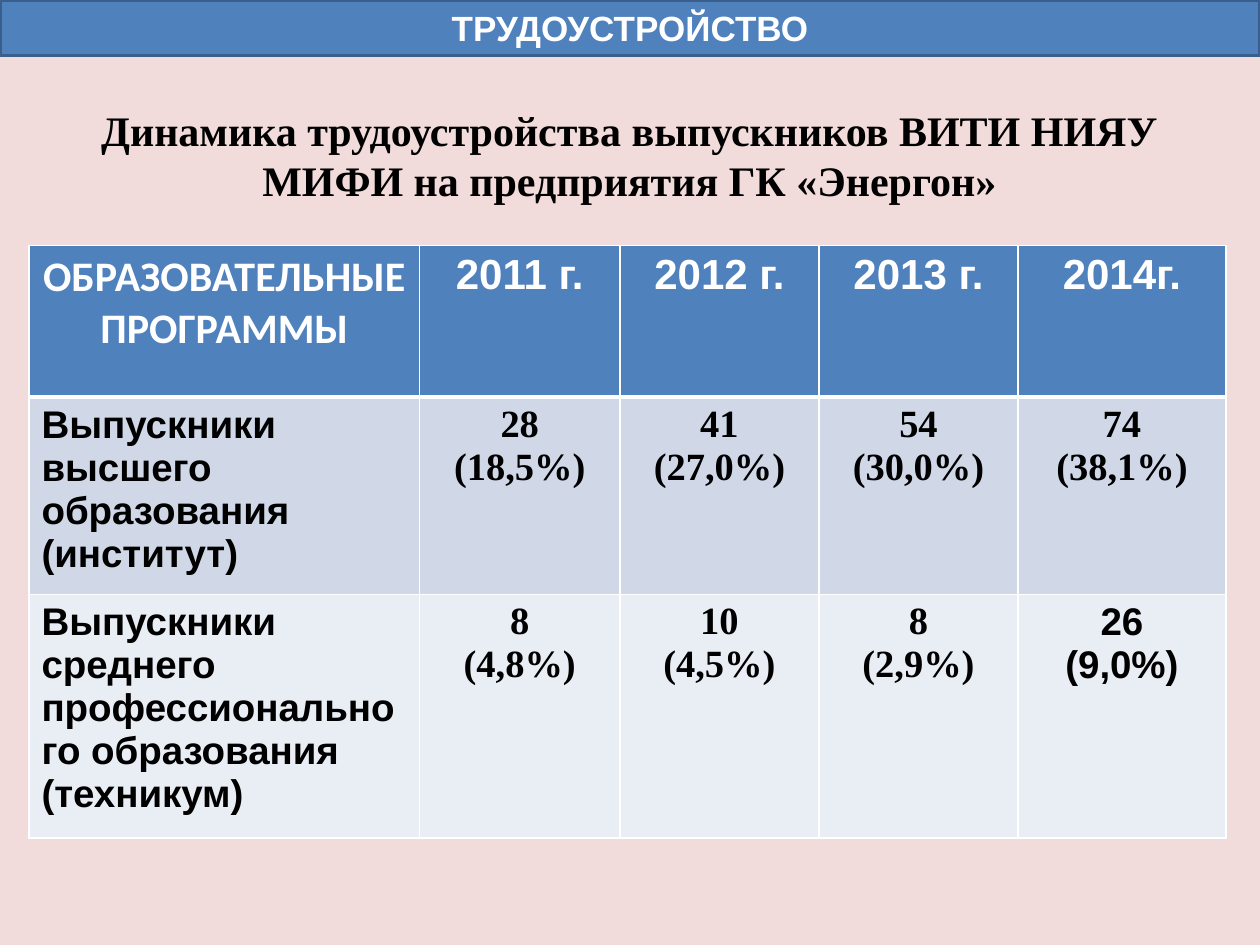
import pptx
import pptx.util
import pptx.dml.color
import pptx.enum.shapes
import pptx.enum.text
import pptx.oxml
import pptx.oxml.ns

Inches, Pt = pptx.util.Inches, pptx.util.Pt
ALIGN = pptx.enum.text.PP_ALIGN
MID = pptx.enum.text.MSO_ANCHOR.MIDDLE

# Content
BANNER = "ТРУДОУСТРОЙСТВО"
TITLE = "Динамика трудоустройства выпускников ВИТИ НИЯУ МИФИ на предприятия ГК «Энергон»"
HEADS = ["ОБРАЗОВАТЕЛЬНЫЕ ПРОГРАММЫ", "2011 г.", "2012 г.", "2013 г.", "2014г."]
ROWS = [
    ["Выпускники высшего образования (институт)",
     "28\n(18,5%)", "41\n(27,0%)", "54\n(30,0%)", "74\n(38,1%)"],
    ["Выпускники среднего профессионального образования (техникум)",
     "8\n(4,8%)", "10\n(4,5%)", "8\n(2,9%)", "26\n(9,0%)"],
]
WIDTHS = [3.1, 1.59, 1.58, 1.58, 1.65]
HEIGHTS = [1.2, 1.56, 1.93]
FILLS = ["4F81BD", "D0D8E8", "E9EDF4"]
SERIF = "Times New Roman"


def color(code):
    return pptx.dml.color.RGBColor.from_string(code)


def paint(fill, code):
    fill.solid()
    fill.fore_color.rgb = color(code)


def write(frame, text, size=24, font="Arial", ink="000000", align=ALIGN.CENTER):
    frame.word_wrap = True
    for i, line in enumerate(text.split("\n")):
        para = frame.add_paragraph() if i else frame.paragraphs[0]
        para.alignment = align
        run = para.add_run()
        run.text = line
        run.font.size, run.font.name, run.font.bold = Pt(size), font, True
        run.font.color.rgb = color(ink)


def border(cell, base):
    """White cell edges; base is the width of the bottom one in points."""
    props = cell._tc.get_or_add_tcPr()
    for i, (side, width) in enumerate([("L", 1), ("R", 1), ("T", 1), ("B", base)]):
        props.insert(i, pptx.oxml.parse_xml(
            f'<a:ln{side} {pptx.oxml.ns.nsdecls("a")} w="{Pt(width)}"><a:solidFill>'
            f'<a:srgbClr val="FFFFFF"/></a:solidFill></a:ln{side}>'))


def style(row, col):
    """Text format of a table cell."""
    if row == 0:
        return dict(font="Arial" if col else "Calibri", ink="FFFFFF")
    if col == 0:
        return dict(size=22, align=ALIGN.LEFT)
    last = (row, col) == (len(ROWS), len(HEADS) - 1)
    return dict(size=22, font="Arial" if last else SERIF)


deck = pptx.Presentation()
deck.slide_width, deck.slide_height = Inches(10), Inches(7.5)
slide = deck.slides.add_slide(deck.slide_layouts[6])
paint(slide.background.fill, "F2DCDB")

# Title
box = slide.shapes.add_textbox(Inches(0.39), Inches(0.78), Inches(9.21), Inches(0.91))
write(box.text_frame, TITLE, font=SERIF)

# Table
table = slide.shapes.add_table(
    len(HEIGHTS), len(WIDTHS), Inches(0.23), Inches(1.95),
    Inches(sum(WIDTHS)), Inches(sum(HEIGHTS))).table
for col, width in enumerate(WIDTHS):
    table.columns[col].width = Inches(width)
for r, texts in enumerate([HEADS] + ROWS):
    table.rows[r].height = Inches(HEIGHTS[r])
    for c, text in enumerate(texts):
        cell = table.cell(r, c)
        paint(cell.fill, FILLS[r])
        border(cell, 1 if r else 3)
        if r == 1:  # same thick edge as the header row's bottom
            cell._tc.tcPr.find(pptx.oxml.ns.qn("a:lnT")).set("w", str(Pt(3)))
        write(cell.text_frame, text, **style(r, c))

# Banner
bar = slide.shapes.add_shape(
    pptx.enum.shapes.MSO_SHAPE.RECTANGLE, 0, 0, Inches(10), Inches(0.44))
bar.shadow.inherit = False
paint(bar.fill, "4F81BD")
paint(bar.line.fill, "3A5F8C")
bar.line.width = Pt(2)
bar.text_frame.vertical_anchor = MID
write(bar.text_frame, BANNER, size=20, ink="FFFFFF")

deck.save("out.pptx")
